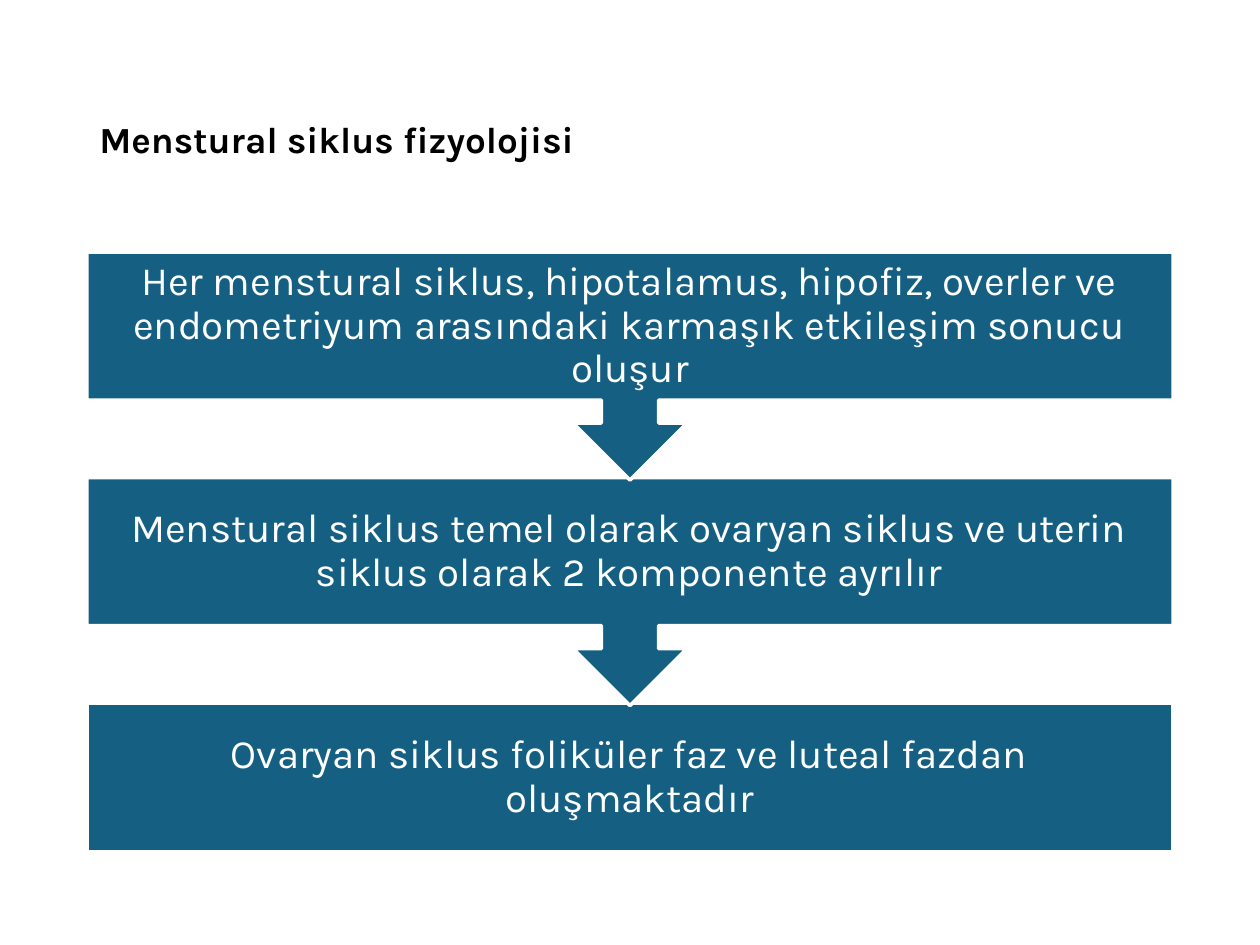
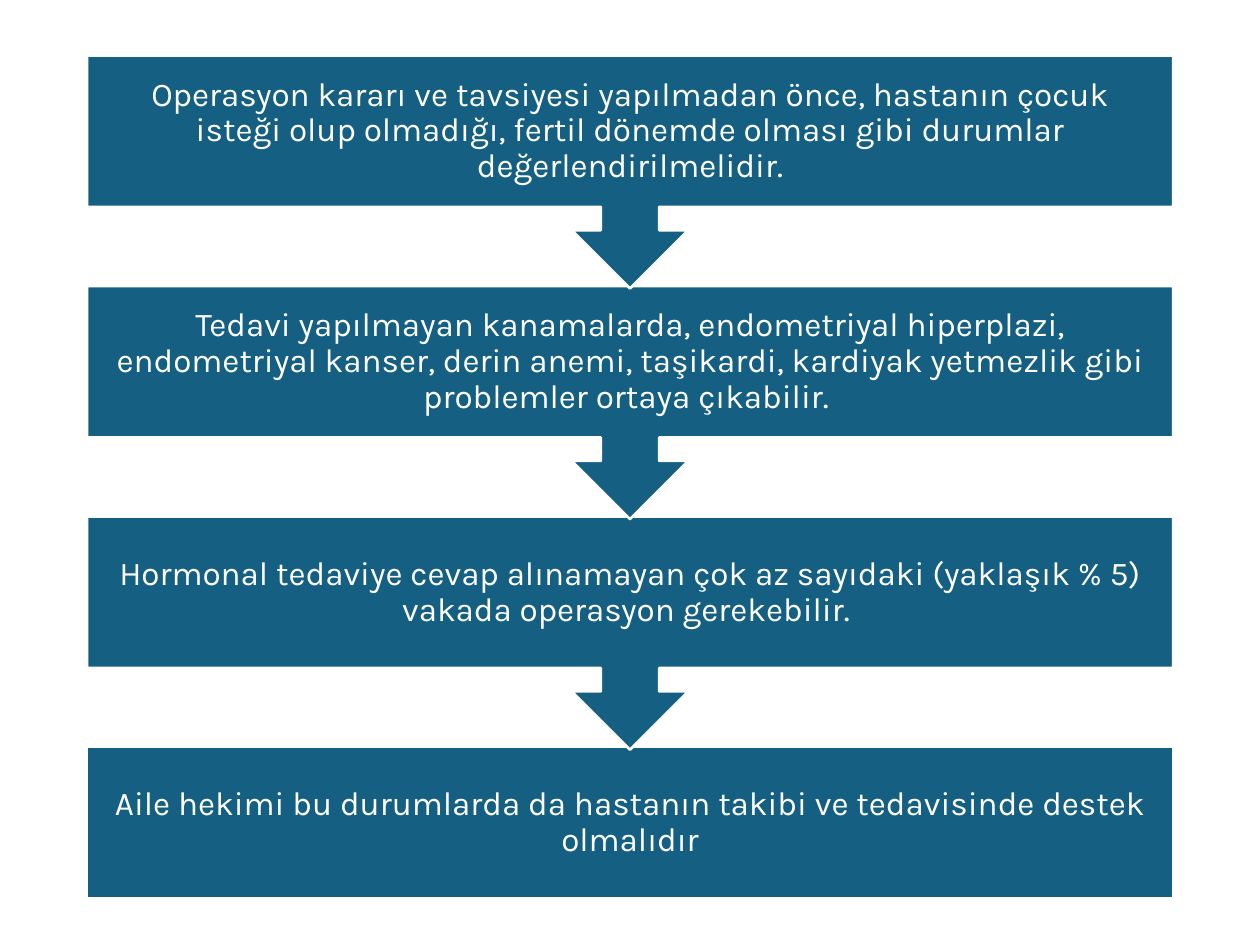
from dataclasses import dataclass

from pptx import Presentation
from pptx.dml.color import RGBColor
from pptx.enum.shapes import MSO_SHAPE
from pptx.enum.text import MSO_ANCHOR, PP_ALIGN
from pptx.util import Inches, Pt

RECT = MSO_SHAPE.RECTANGLE
CALLOUT = MSO_SHAPE.DOWN_ARROW_CALLOUT
MIDDLE = MSO_ANCHOR.MIDDLE
LEFT, CENTER = PP_ALIGN.LEFT, PP_ALIGN.CENTER


@dataclass(frozen=True)
class Theme:
    font: str = "Karla"
    ink: RGBColor = RGBColor(0x00, 0x00, 0x00)
    paper: RGBColor = RGBColor(0xFF, 0xFF, 0xFF)
    fill: RGBColor = RGBColor(0x15, 0x60, 0x82)
    title: int = 21
    large: int = 23
    small: int = 19
    leading: float = 0.9


THEME = Theme()
MARGIN, WIDTH = 0.69, 8.62

CYCLE = [
    "Her menstural siklus, hipotalamus, hipofiz, overler ve endometriyum "
    "arasındaki karmaşık etkileşim sonucu oluşur",
    "Menstural siklus temel olarak ovaryan siklus ve uterin siklus olarak "
    "2 komponente ayrılır",
    "Ovaryan siklus foliküler faz ve luteal fazdan oluşmaktadır",
]
CARE = [
    "Operasyon kararı ve tavsiyesi yapılmadan önce, hastanın çocuk isteği "
    "olup olmadığı, fertil dönemde olması gibi durumlar değerlendirilmelidir.",
    "Tedavi yapılmayan kanamalarda, endometriyal hiperplazi, endometriyal "
    "kanser, derin anemi, taşikardi, kardiyak yetmezlik gibi problemler "
    "ortaya çıkabilir. ",
    "Hormonal tedaviye cevap alınamayan çok az sayıdaki (yaklaşık % 5) "
    "vakada operasyon gerekebilir. ",
    "Aile hekimi bu durumlarda da hastanın takibi ve tedavisinde destek "
    "olmalıdır",
]


def apply(target, values):
    for name, value in values.items():
        setattr(target, name, value)


def write(shape, text, size, color, align, inset=None, bold=False):
    """Put one styled paragraph into a shape."""
    frame = shape.text_frame
    apply(frame, {"word_wrap": True, "vertical_anchor": MIDDLE})
    if inset is not None:
        sides = ("left", "top", "right", "bottom")
        apply(frame, {f"margin_{side}": Inches(inset) for side in sides})
    para = frame.paragraphs[0]
    apply(para, {"alignment": align, "line_spacing": THEME.leading})
    run = para.add_run()
    run.text = text
    apply(run.font, {"name": THEME.font, "size": Pt(size), "bold": bold})
    run.font.color.rgb = color


def title(slide, text, box):
    area = slide.shapes.add_textbox(*map(Inches, box))
    write(area, text, THEME.title, THEME.ink, LEFT, bold=True)


def flow(slide, steps, box, pitch, size, inset, edge):
    """Stack steps in the box; every step but the last points down."""
    left, top, width, height = box
    last = len(steps) - 1
    foot = height - last * pitch
    # Lower steps go first so that each arrow tip lies on top
    for row in range(last, -1, -1):
        kind, tall = (RECT, foot) if row == last else (CALLOUT, pitch + 0.02)
        place = (left, top + row * pitch, width, tall)
        step = slide.shapes.add_shape(kind, *map(Inches, place))
        step.shadow.inherit = False
        step.fill.solid()
        step.fill.fore_color.rgb = THEME.fill
        step.line.color.rgb = THEME.paper
        step.line.width = Pt(edge)
        write(step, steps[row], size, THEME.paper, CENTER, inset)


def main():
    deck = Presentation()
    apply(deck, {"slide_width": Inches(10), "slide_height": Inches(7.5)})
    blank = deck.slide_layouts[6]

    # Physiology of the cycle
    slide = deck.slides.add_slide(blank)
    title(slide, "Menstural siklus fizyolojisi", (MARGIN, 0.4, WIDTH, 1.45))
    flow(slide, CYCLE, (MARGIN, 2, WIDTH, 4.76), 1.79, THEME.large, 0.18, 2)

    # Decisions on treatment
    slide = deck.slides.add_slide(blank)
    flow(slide, CARE, (MARGIN, 0.44, WIDTH, 6.69), 1.83, THEME.small, 0.15, 1.5)

    deck.save("out.pptx")


if __name__ == "__main__":
    main()
